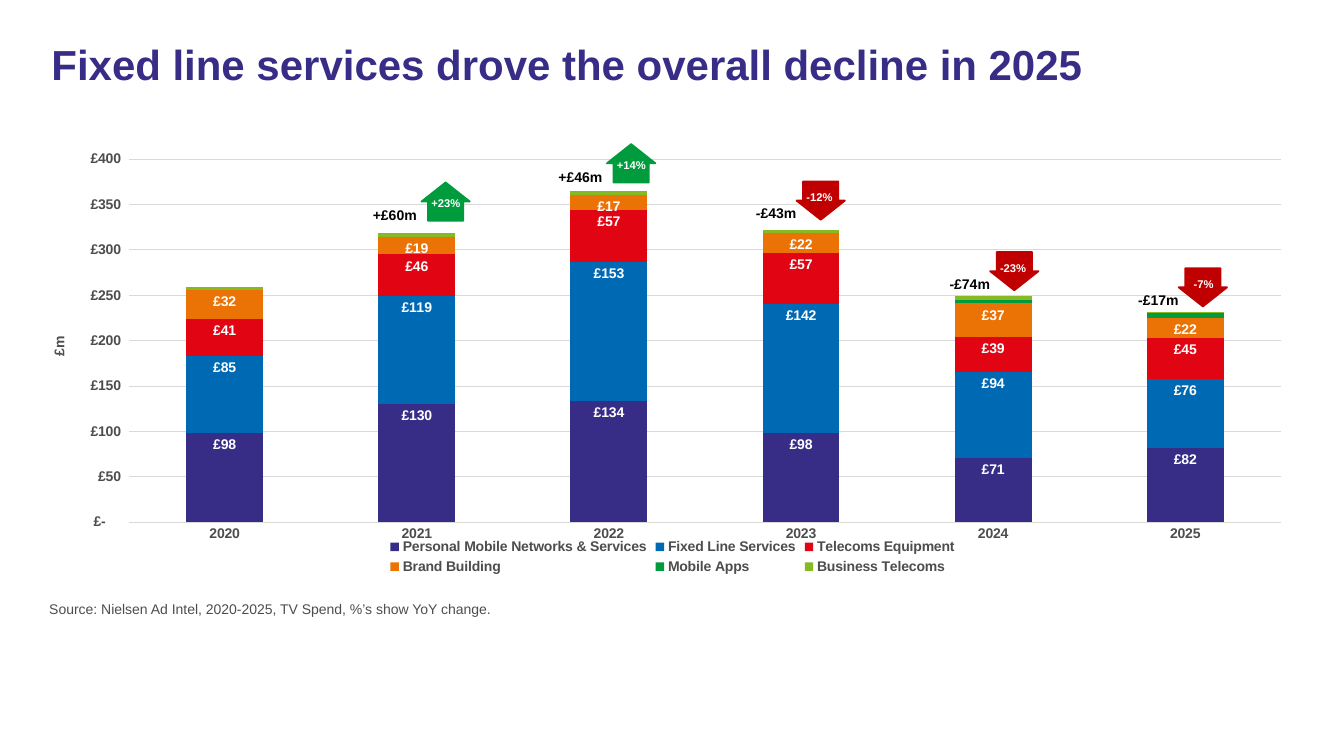
from lxml.etree import SubElement, QName
from pptx import Presentation as Deck
from pptx.chart.data import CategoryChartData as Data
from pptx.dml.color import RGBColor as RGB
from pptx.enum.chart import XL_CHART_TYPE as Kind
from pptx.enum.chart import XL_LABEL_POSITION as Spot
from pptx.enum.chart import XL_LEGEND_POSITION as Side
from pptx.enum.chart import XL_TICK_MARK as Tick
from pptx.enum.shapes import MSO_SHAPE as Form
from pptx.enum.text import MSO_ANCHOR as Anchor
from pptx.enum.text import PP_ALIGN as Align
from pptx.oxml.ns import qn
from pptx.util import Inches, Pt

INK, GREY, RULE, WHITE, BLACK = "372D87", "4D4D4D", "D9D9D9", "FFFFFF", "000000"
GREEN, RED = "009B3C", "C00000"
POUNDS = '_-"£"* #,##0_-;\\-"£"* #,##0_-;_-"£"* "-"??_-;_-@_-'

YEARS = ["2020", "2021", "2022", "2023", "2024", "2025"]
SPEND = [
    ("Personal Mobile Networks & Services", INK, (98, 130, 134, 98, 71, 82)),
    ("Fixed Line Services", "0069B4", (85, 119, 153, 142, 94, 76)),
    ("Telecoms Equipment", "E10514", (41, 46, 57, 57, 39, 45)),
    ("Brand Building", "EB7305", (32, 19, 17, 22, 37, 22)),
    ("Mobile Apps", GREEN, (0, 0, 0, 0, 4, 5)),
    ("Business Telecoms", "87B923", (3, 5, 4, 3, 4, 2)),
]
LABELLED = 4
CHANGES = [
    (4.18, 1.81, "+£60m", "+23%"),
    (6.02, 1.43, "+£46m", "+14%"),
    (7.9, 1.8, "-£43m", "-12%"),
    (9.82, 2.5, "-£74m", "-23%"),
    (11.69, 2.66, "-£17m", "-7%"),
]


def tint(code):
    return RGB.from_string(code)


def box(*sides):
    return [Inches(side) for side in sides]


class Page:
    face = "Arial"

    def __init__(self, deck):
        self.slide = deck.slides.add_slide(deck.slide_layouts[5])
        self.shapes = self.slide.shapes

    def style(self, font, size, color, bold=True):
        font.name = self.face
        font.size = Pt(size)
        font.bold = bold
        font.color.rgb = tint(color)

    def title(self, text, place):
        head = self.shapes.title
        head.left, head.top, head.width, head.height = box(*place)
        frame = head.text_frame
        frame.text = text
        frame.vertical_anchor = Anchor.TOP
        para = frame.paragraphs[0]
        para.alignment = Align.LEFT
        para.line_spacing = 0.9
        self.style(para.font, 30, INK)

    def text(self, text, place, size, color, bold=True, home=None):
        frame = (home or self.shapes).add_textbox(*box(*place)).text_frame
        frame.word_wrap = True
        para = frame.paragraphs[0]
        para.text = text
        self.style(para.font, size, color, bold)

    def change(self, left, top, amount, share):
        rise = amount.startswith("+")
        home = self.shapes.add_group_shape().shapes
        shift, drop, dip = (0.58, 0.19, 0.09) if rise else (0.5, 0.18, 0.04)
        inset = 0.05 if len(share) < 4 else 0
        self.text(amount, (left - shift, top + drop, 0.74, 0.27), 10, BLACK, home=home)
        arrow = home.add_shape(Form.UP_ARROW, *box(left, top, 0.48, 0.38))
        arrow.adjustments[0] = 0.728
        arrow.adjustments[1] = 0.5
        arrow.rotation = 0 if rise else 180
        arrow.shadow.inherit = False
        color = tint(GREEN if rise else RED)
        arrow.fill.solid()
        arrow.fill.fore_color.rgb = color
        arrow.line.color.rgb = color
        arrow.line.width = Pt(1.25)
        self.text(share, (left + inset, top + dip, 0.96, 0.24), 8, WHITE, home=home)

    def axis(self, axis):
        axis.major_tick_mark = axis.minor_tick_mark = Tick.NONE
        self.style(axis.tick_labels.font, 10, GREY)

    def rule(self, form):
        form.line.color.rgb = tint(RULE)
        form.line.width = Pt(0.75)

    def layout(self, chart, **sizes):
        area = chart.plots[0]._element.getparent()
        for old in area.findall(qn("c:layout")):
            area.remove(old)
        frame = SubElement(area, QName(qn("c:layout")))
        area.insert(0, frame)
        manual = SubElement(frame, qn("c:manualLayout"))
        marks = {"layoutTarget": "inner", "xMode": "edge", "yMode": "edge", **sizes}
        for name, value in marks.items():
            SubElement(manual, qn("c:" + name)).set("val", str(value))

    def chart(self, place):
        data = Data(number_format=POUNDS)
        data.categories = YEARS
        for name, _, values in SPEND:
            data.add_series(name, values)
        chart = self.shapes.add_chart(Kind.COLUMN_STACKED, *box(*place), data).chart
        self.style(chart.font, 10, BLACK)
        chart.has_title = False
        chart.has_legend = True
        chart.legend.position = Side.BOTTOM
        chart.legend.include_in_layout = False
        self.style(chart.legend.font, 10, GREY)

        years, money = chart.category_axis, chart.value_axis
        self.axis(years)
        self.axis(money)
        self.rule(years.format)
        self.rule(money.major_gridlines.format)
        money.format.line.fill.background()
        money.minimum_scale, money.maximum_scale, money.major_unit = 0, 400, 50
        money.tick_labels.number_format = POUNDS
        money.tick_labels.number_format_is_linked = False
        para = money.axis_title.text_frame.paragraphs[0]
        para.text = "£m"
        self.style(para.font, 10, GREY)

        plot = chart.plots[0]
        plot.gap_width, plot.overlap = 150, 100
        plot.vary_by_categories = False
        for rank, (series, (_, color, _)) in enumerate(zip(plot.series, SPEND)):
            series.format.fill.solid()
            series.format.fill.fore_color.rgb = tint(color)
            if rank < LABELLED:
                labels = series.data_labels
                labels.show_value = True
                labels.position = Spot.INSIDE_END
                labels.number_format = POUNDS
                labels.number_format_is_linked = False
                self.style(labels.font, 10, WHITE)
        self.layout(chart, x=0.065, y=0.046, w=0.922, h=0.826)


def main():
    deck = Deck()
    deck.slide_width, deck.slide_height = box(13.33, 7.5)
    page = Page(deck)
    page.chart((0.47, 1.38, 12.4, 4.36))
    page.title("Fixed line services drove the overall decline in 2025", (0.41, 0.39, 12.4, 1.12))
    page.text(
        "Source: Nielsen Ad Intel, 2020-2025, TV Spend, %’s show YoY change.",
        (0.39, 5.91, 12.4, 0.33), 10, GREY, bold=False,
    )
    for change in CHANGES:
        page.change(*change)
    deck.save("out.pptx")


if __name__ == "__main__":
    main()
